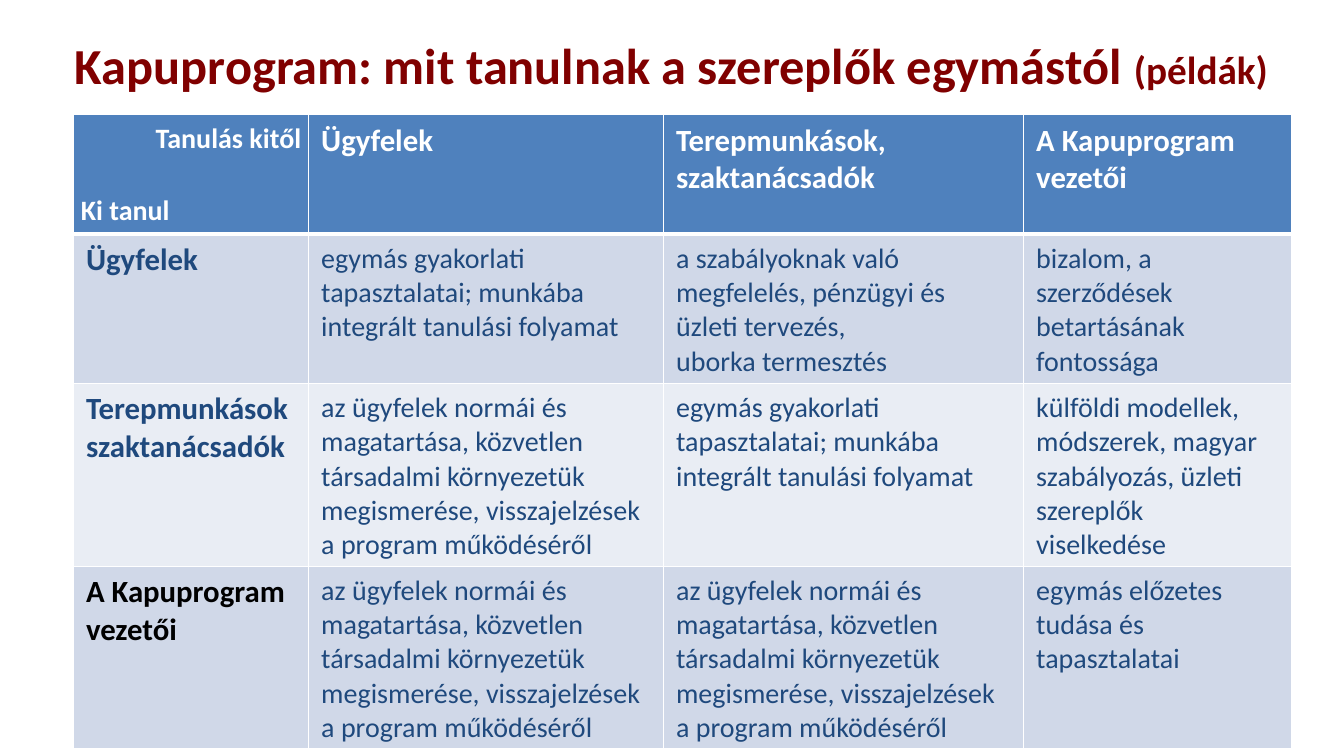
from typing import NamedTuple

from lxml.etree import SubElement
from pptx import Presentation
from pptx.dml.color import RGBColor
from pptx.enum.text import MSO_ANCHOR as Anchor, PP_ALIGN as Align
from pptx.oxml.ns import qn
from pptx.util import Emu, Pt

PX = 9525  # EMU per px, 96 px to the inch
FONT = "Calibri"
WHITE, BLACK, NAVY, MAROON = "FFFFFF", "000000", "1F497D", "800000"
HEADER_FILL, ODD_FILL, EVEN_FILL = "4F81BD", "D0D8E8", "E9EDF4"
COLUMN_WIDTHS = (224, 338, 343, 255)

HEADERS = ("Ügyfelek", "Terepmunkások, szaktanácsadók", "A Kapuprogram vezetői")
PEER_LEARNING = "egymás gyakorlati tapasztalatai; munkába integrált tanulási folyamat"
CLIENT_LEARNING = ("az ügyfelek normái és magatartása, közvetlen társadalmi környezetük "
                   "megismerése, visszajelzések a program működéséről")


class LearnerRow(NamedTuple):
    label: str
    label_color: str
    lessons: tuple[str, ...]
    fill: str
    height: int


LEARNERS = (
    LearnerRow("Ügyfelek", NAVY, (
        PEER_LEARNING,
        "a szabályoknak való megfelelés, pénzügyi és üzleti tervezés,\nuborka termesztés",
        "bizalom, a szerződések betartásának fontossága"), ODD_FILL, 112),
    LearnerRow("Terepmunkások\vszaktanácsadók", NAVY, (
        CLIENT_LEARNING,
        PEER_LEARNING,
        "külföldi modellek, módszerek, magyar szabályozás, üzleti szereplők viselkedése"),
        EVEN_FILL, 143),
    LearnerRow("A Kapuprogram vezetői", BLACK, (
        CLIENT_LEARNING,
        CLIENT_LEARNING,
        "egymás előzetes tudása és tapasztalatai"), ODD_FILL, 128),
)


def px(length: int) -> Emu:
    return Emu(length * PX)


def rgb(color: str) -> RGBColor:
    return RGBColor.from_string(color)


def set_attributes(target, values: dict) -> None:
    for name, value in values.items():
        setattr(target, name, value)


def style_run(run, size: int, color: str, bold: bool) -> None:
    set_attributes(run.font, {"name": FONT, "size": Pt(size), "bold": bold})
    run.font.color.rgb = rgb(color)


def add_borders(cell, top: int, bottom: int) -> None:
    properties = cell._tc.get_or_add_tcPr()
    for side, points in (("L", 1), ("R", 1), ("T", top), ("B", bottom)):
        line = SubElement(properties, qn(f"a:ln{side}"), w=str(Pt(points)))
        fill = SubElement(line, qn("a:solidFill"))
        SubElement(fill, qn("a:srgbClr"), val=WHITE)


def fill_cell(cell, text: str, size: int, color: str, bold: bool, fill: str,
              top: int = 1, bottom: int = 1, side_margin: int = 12) -> None:
    set_attributes(cell, {"margin_left": px(side_margin), "margin_right": px(side_margin),
                          "margin_top": px(7), "margin_bottom": px(7)})
    add_borders(cell, top, bottom)
    cell.fill.solid()
    cell.fill.fore_color.rgb = rgb(fill)
    cell.text_frame.text = text
    for paragraph in cell.text_frame.paragraphs:
        for run in paragraph.runs:
            style_run(run, size, color, bold)


def add_title(slide) -> None:
    shape = slide.shapes.add_textbox(px(62), px(4), px(1192), px(122))
    set_attributes(shape.text_frame, {"word_wrap": True, "vertical_anchor": Anchor.MIDDLE})
    paragraph = shape.text_frame.paragraphs[0]
    paragraph.line_spacing = 0.9
    for text, size in (("Kapuprogram: mit tanulnak a szereplők egymástól ", 36),
                       ("(példák)", 28)):
        run = paragraph.add_run()
        run.text = text
        style_run(run, size, MAROON, True)


def add_learning_table(slide) -> None:
    frame = slide.shapes.add_table(len(LEARNERS) + 1, len(COLUMN_WIDTHS),
                                   px(70), px(109), px(sum(COLUMN_WIDTHS)), px(598))
    table = frame.table
    for column, width in zip(table.columns, COLUMN_WIDTHS):
        column.width = px(width)

    # Header row, with a corner cell naming both axes
    table.rows[0].height = px(76)
    corner = table.cell(0, 0)
    fill_cell(corner, "Tanulás kitől\nKi tanul", 20, WHITE, True, HEADER_FILL,
              bottom=3, side_margin=7)
    source_axis, learner_axis = corner.text_frame.paragraphs
    source_axis.alignment = Align.RIGHT
    learner_axis.space_before = Pt(27)
    for column, header in enumerate(HEADERS, 1):
        fill_cell(table.cell(0, column), header, 22, WHITE, True, HEADER_FILL, bottom=3)

    # One row per learner
    for index, learner in enumerate(LEARNERS, 1):
        table.rows[index].height = px(learner.height)
        top = 3 if index == 1 else 1
        fill_cell(table.cell(index, 0), learner.label, 22, learner.label_color, True,
                  learner.fill, top)
        for column, lesson in enumerate(learner.lessons, 1):
            fill_cell(table.cell(index, column), lesson, 20, NAVY, False, learner.fill, top)


def main() -> None:
    presentation = Presentation()
    set_attributes(presentation, {"slide_width": px(1280), "slide_height": px(720)})
    slide = presentation.slides.add_slide(presentation.slide_layouts[6])
    add_title(slide)
    add_learning_table(slide)
    presentation.save("out.pptx")


if __name__ == "__main__":
    main()
